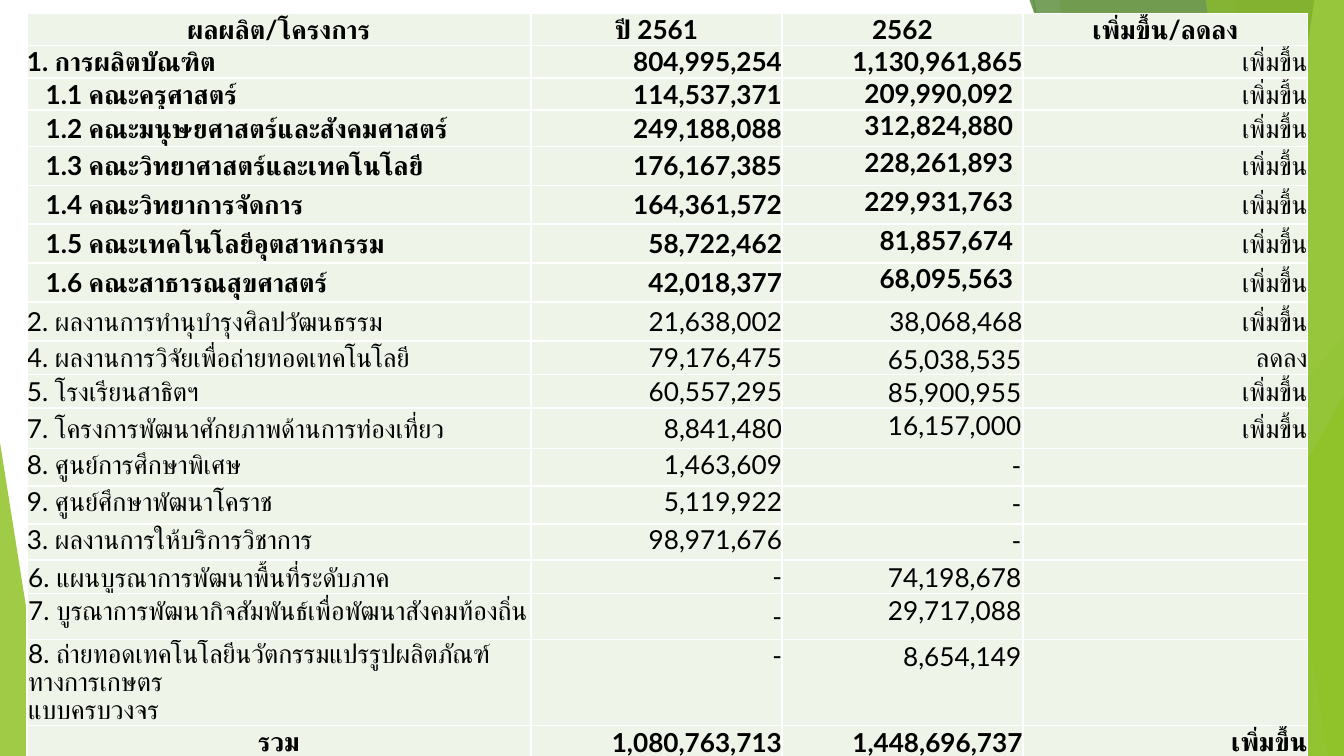
from dataclasses import dataclass

from lxml import etree
from pptx import Presentation
from pptx import util as u
from pptx.dml import color as col
from pptx.enum import shapes, text
from pptx.oxml import ns


@dataclass(frozen=True)
class Theme:
    font: str = "Lato"
    size: int = 14
    ink: str = "000000"
    cell: str = "EEF4E8"
    rule: str = "FFFFFF"
    gray: str = "BFBFBF"
    pale: str = "D9D9D9"
    lime: str = "90C226"
    leaf: str = "54A021"
    moss: str = "3F7819"
    mint: str = "C0E474"


T = Theme()
WIDE = 10
HIGH = WIDE * 9 / 16
UP = "เพิ่มขึ้น"
DOWN = "ลดลง"
COLS = [3.75, 1.87, 1.79, 2.12]

# Cell fits: anchor, side inset, top inset
ANC = text.MSO_ANCHOR
FITS = {
    "M": (ANC.MIDDLE, 0, 0),
    "T": (ANC.TOP, 0, 0),
    "B": (ANC.BOTTOM, 0, 0),
    "W": (ANC.TOP, 0.07, 0),
    "t": (ANC.TOP, 0.01, 0.01),
    "b": (ANC.BOTTOM, 0.01, 0.01),
}

# Row height, fits of the four cells, label, 2561, 2562, trend
ROWS = [
    (0.24, "MMMM", "ผลผลิต/โครงการ", "ปี 2561", "2562", "เพิ่มขึ้น/ลดลง"),
    (0.24, "MMMM", "1. การผลิตบัณฑิต", "804,995,254", "1,130,961,865", UP),
    (0.24, "MMWM", "1.1 คณะครุศาสตร์", "114,537,371", "209,990,092", UP),
    (0.27, "MMWM", "1.2 คณะมนุษยศาสตร์และสังคมศาสตร์", "249,188,088", "312,824,880", UP),
    (0.29, "MMWM", "1.3 คณะวิทยาศาสตร์และเทคโนโลยี", "176,167,385", "228,261,893", UP),
    (0.29, "MMWM", "1.4 คณะวิทยาการจัดการ", "164,361,572", "229,931,763", UP),
    (0.29, "MMWM", "1.5 คณะเทคโนโลยีอุตสาหกรรม", "58,722,462", "81,857,674", UP),
    (0.29, "MMWM", "1.6 คณะสาธารณสุขศาสตร์", "42,018,377", "68,095,563", UP),
    (0.29, "MMMM", "2. ผลงานการทำนุบำรุงศิลปวัฒนธรรม", "21,638,002", "38,068,468", UP),
    (0.25, "MMbM", "4. ผลงานการวิจัยเพื่อถ่ายทอดเทคโนโลยี", "79,176,475", "65,038,535", DOWN),
    (0.25, "MMbM", "5. โรงเรียนสาธิตฯ", "60,557,295", "85,900,955", UP),
    (0.3, "MMtM", "7. โครงการพัฒนาศักยภาพด้านการท่องเที่ยว", "8,841,480", "16,157,000", UP),
    (0.28, "TTtT", "8. ศูนย์การศึกษาพิเศษ", "1,463,609", "-", ""),
    (0.28, "TTtT", "9. ศูนย์ศึกษาพัฒนาโคราช", "5,119,922", "-", ""),
    (0.27, "TTtT", "3. ผลงานการให้บริการวิชาการ", "98,971,676", "-", ""),
    (0.25, "tMtT", "6. แผนบูรณาการพัฒนาพื้นที่ระดับภาค", "-", "74,198,678", ""),
    (0.34, "tMtT", "7. บูรณาการพัฒนากิจสัมพันธ์เพื่อพัฒนาสังคมท้องถิ่น", "-", "29,717,088", ""),
    (0.49, "tTtT", "8. ถ่ายทอดเทคโนโลยีนวัตกรรมแปรรูปผลิตภัณฑ์ทางการเกษตร\nแบบครบวงจร",
     "-", "8,654,149", ""),
    (0.24, "MBBM", "รวม", "1,080,763,713", "1,448,696,737", UP),
]
LAST = len(ROWS) - 1


def rgb(hue):
    return col.RGBColor.from_string(hue)


def sub(node, tag, **attrs):
    return etree.SubElement(node, ns.qn(tag), **attrs)


def paint(shape, hue, alpha):
    shape.shadow.inherit = False
    shape.fill.solid()
    shape.fill.fore_color.rgb = rgb(hue)
    shape.line.fill.background()
    tint = shape.fill._xPr.find(".//" + ns.qn("a:srgbClr"))
    sub(tint, "a:alpha", val=str(alpha * 1000))


def add_line(slide, start, end, hue):
    ends = [u.Inches(n) for n in (*start, *end)]
    line = slide.shapes.add_connector(shapes.MSO_CONNECTOR.STRAIGHT, *ends)
    line.line.color.rgb = rgb(hue)
    line.line.width = u.Pt(0.75)
    sub(line._element.spPr, "a:effectLst")


def add_band(slide, top, foot, hue, alpha):
    """Fill from a slanted left edge to the right side of the slide."""
    right, base = u.Inches(WIDE), u.Inches(HIGH)
    pen = slide.shapes.build_freeform(u.Inches(top), 0)
    pen.add_line_segments([(right, 0), (right, base), (u.Inches(foot), base)], close=True)
    paint(pen.convert_to_shape(), hue, alpha)


def add_wedge(slide, left, top, width, tip, hue, alpha):
    box = [u.Inches(n) for n in (left, top, width, HIGH - top)]
    wedge = slide.shapes.add_shape(shapes.MSO_SHAPE.ISOSCELES_TRIANGLE, *box)
    wedge.adjustments[0] = tip
    paint(wedge, hue, alpha)


def add_back(slide):
    add_line(slide, (7.69, 0), (8.69, HIGH), T.gray)
    add_line(slide, (WIDE, 3.02), (6.09, HIGH), T.pale)
    add_band(slide, 9.21, 7.53, T.lime, 30)
    add_band(slide, 7.88, 8.87, T.lime, 20)
    add_wedge(slide, 7.33, 2.5, 2.67, 1, T.leaf, 72)
    add_band(slide, 7.66, 9.68, T.moss, 70)
    add_band(slide, 9.78, 8.94, T.mint, 70)
    add_band(slide, 8.97, 9.88, T.lime, 65)
    add_wedge(slide, 8.51, 2.94, 1.49, 1, T.lime, 80)
    add_wedge(slide, 0, 3.29, 0.37, 0, T.lime, 85)


def style_cell(cell, fit):
    anchor, side, top = FITS[fit]
    cell.vertical_anchor = anchor
    cell.margin_left = cell.margin_right = u.Inches(side)
    cell.margin_top, cell.margin_bottom = u.Inches(top), 0
    for edge in ("a:lnL", "a:lnR", "a:lnT", "a:lnB"):
        line = sub(cell._tc.get_or_add_tcPr(), edge, w=str(u.Pt(1)))
        sub(sub(line, "a:solidFill"), "a:srgbClr", val=T.rule)
    cell.fill.solid()
    cell.fill.fore_color.rgb = rgb(T.cell)


def add_text(cell, words, align, bold):
    para = cell.text_frame.paragraphs[0]
    para.alignment = align
    if not words:
        sub(para._p, "a:endParaRPr", sz=str(T.size * 100))
        return
    parts = words.split("\n")
    if len(parts) > 1:
        para.line_spacing = 0.9
    for i, part in enumerate(parts):
        if i:
            para.add_line_break()
        run = para.add_run()
        run.text = part
        font = run.font
        font.name, font.size, font.bold = T.font, u.Pt(T.size), bold
        font.color.rgb = rgb(T.ink)
        sub(font._element, "a:cs", typeface=T.font)


def add_grid(slide):
    box = [u.Inches(n) for n in (0.2, 0.1, sum(COLS), sum(r[0] for r in ROWS))]
    grid = slide.shapes.add_table(len(ROWS), len(COLS), *box).table
    grid.first_row = grid.horz_banding = False
    for c, width in enumerate(COLS):
        grid.columns[c].width = u.Inches(width)
    for r, (height, fits, *words) in enumerate(ROWS):
        grid.rows[r].height = u.Inches(height)
        for c, word in enumerate(words):
            cell = grid.cell(r, c)
            style_cell(cell, fits[c])
            # Sub-items of the first group are indented
            if c == 0 and word.startswith("1.") and word[2] != " ":
                cell.margin_left = u.Inches(0.14)
            if r == 0 or (r == LAST and c == 0):
                align = text.PP_ALIGN.CENTER
            else:
                align = text.PP_ALIGN.RIGHT if c else text.PP_ALIGN.LEFT
            bold = r in (0, LAST) or (r < 8 and c < 3)
            add_text(cell, word, align, bold)


def main():
    deck = Presentation()
    deck.slide_width, deck.slide_height = u.Inches(WIDE), u.Inches(HIGH)
    slide = deck.slides.add_slide(deck.slide_layouts[6])
    add_back(slide)
    add_grid(slide)
    deck.save("out.pptx")


if __name__ == "__main__":
    main()
